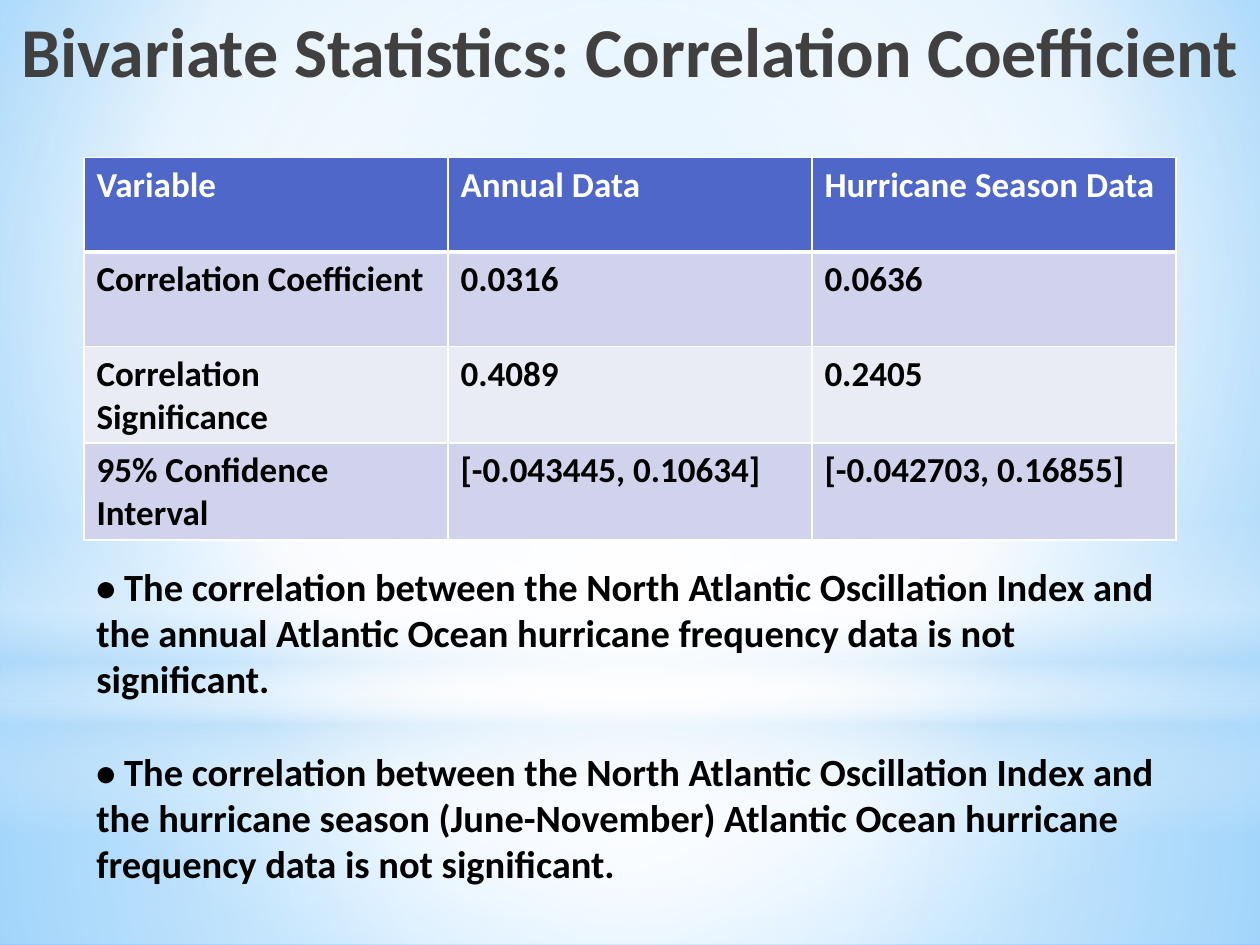
from typing import NamedTuple

from lxml.etree import SubElement
from pptx import Presentation
from pptx.dml.color import RGBColor
from pptx.enum.shapes import MSO_SHAPE as Shape
from pptx.enum.text import PP_ALIGN as Align
from pptx.oxml.ns import qn
from pptx.util import Pt

COLORS = {
    "white": "FFFFFF",
    "black": "000000",
    "title": "404040",
    "header": "4E67C8",
    "band_dark": "D0D3EB",
    "band_light": "E9EBF5",
    "haze": "B4DCFA",
    "sky": "9ED5FF",
    "deep_sky": "5BB9FF",
}
FONT = "Calibri"
WIDTH, HEIGHT = 720, 540
MARGIN, CONTENT_WIDTH = 48, 624
CENTER = (50, 50, 50, 50)


class Stop(NamedTuple):
    position: int
    color: str
    opacity: int = 100


class Glow(NamedTuple):
    shape: Shape
    top: float
    height: float
    stops: list[Stop]
    focus: tuple | None = CENTER  # None gives a vertical linear gradient


GLOWS = [
    Glow(Shape.RECTANGLE, 402, 138,
         [Stop(0, "white", 91), Stop(37, "white", 76), Stop(100, "haze", 79)]),
    Glow(Shape.RECTANGLE, 0, 402,
         [Stop(0, "white", 89), Stop(48, "white", 62), Stop(100, "haze", 79)]),
    Glow(Shape.RECTANGLE, 297, 180,
         [Stop(0, "white", 0), Stop(29, "white", 30), Stop(45, "haze", 40),
          Stop(55, "white", 26), Stop(65, "haze", 60), Stop(100, "white", 0)], None),
    Glow(Shape.OVAL, 126, 402, [Stop(0, "white"), Stop(56, "white", 0)]),
]
ROWS = [
    ("Variable", "Annual Data", "Hurricane Season Data"),
    ("Correlation Coefficient", "0.0316", "0.0636"),
    ("Correlation Significance", "0.4089", "0.2405"),
    ("95% Confidence Interval", "[-0.043445, 0.10634]", "[-0.042703, 0.16855]"),
]
FINDINGS = [
    "• The correlation between the North Atlantic Oscillation Index and "
    "the annual Atlantic Ocean hurricane frequency data is not significant.",
    "• The correlation between the North Atlantic Oscillation Index and the hurricane "
    "season (June-November) Atlantic Ocean hurricane frequency data is not significant.",
]


def rgb(name: str) -> RGBColor:
    return RGBColor.from_string(COLORS[name])


def add_color(parent, name: str, opacity: int = 100) -> None:
    color = SubElement(parent, qn("a:srgbClr"), val=COLORS[name])
    if opacity < 100:
        SubElement(color, qn("a:alpha"), val=str(opacity * 1000))


def set_gradient(fill, holder, stops: list[Stop], focus: tuple | None) -> None:
    """Swap the holder's fill for a gradient, radial around focus or vertical."""
    fill.solid()
    solid = holder.find(qn("a:solidFill"))
    gradient = holder.makeelement(qn("a:gradFill"), {"rotWithShape": "1"})
    stop_list = SubElement(gradient, qn("a:gsLst"))
    for stop in stops:
        entry = SubElement(stop_list, qn("a:gs"), pos=str(stop.position * 1000))
        add_color(entry, stop.color, stop.opacity)
    if focus:
        radial = SubElement(gradient, qn("a:path"), path="circle")
        sides = {side: str(value * 1000) for side, value in zip("ltrb", focus)}
        SubElement(radial, qn("a:fillToRect"), sides)
    else:
        SubElement(gradient, qn("a:lin"), ang="5400000", scaled="0")
    holder.replace(solid, gradient)


def add_glow(page, glow: Glow) -> None:
    shape = page.shapes.add_shape(glow.shape, 0, Pt(glow.top), Pt(WIDTH), Pt(glow.height))
    shape.shadow.inherit = False
    shape.line.fill.background()
    set_gradient(shape.fill, shape.element.spPr, glow.stops, glow.focus)


def write_text(frame, *texts: str, size: float, color: str = "black",
               align: Align = Align.LEFT, gap: float = 0) -> None:
    """Write one bold paragraph per text, with a gap between paragraphs."""
    frame.word_wrap = True
    for index, text in enumerate(texts):
        para = frame.add_paragraph() if index else frame.paragraphs[0]
        para.alignment = align
        para.space_before = Pt(gap if index else 0)
        span = para.add_run()
        span.text = text
        span.font.name, span.font.size, span.font.bold = FONT, Pt(size), True
        span.font.color.rgb = rgb(color)


def add_text(page, left: float, top: float, width: float, height: float,
             *texts: str, **style) -> None:
    box = page.shapes.add_textbox(Pt(left), Pt(top), Pt(width), Pt(height))
    write_text(box.text_frame, *texts, **style)


def set_borders(cell, top: float, bottom: float) -> None:
    properties = cell._tc.get_or_add_tcPr()
    for side, width in (("L", 1), ("R", 1), ("T", top), ("B", bottom)):
        line = SubElement(properties, qn(f"a:ln{side}"), w=str(Pt(width)))
        add_color(SubElement(line, qn("a:solidFill")), "white")


def add_data_table(page, rows: list[tuple], top: float, row_height: float) -> None:
    table = page.shapes.add_table(len(rows), len(rows[0]), Pt(MARGIN), Pt(top),
                                  Pt(CONTENT_WIDTH), Pt(row_height * len(rows))).table
    for row, texts in enumerate(rows):
        band = "header" if row == 0 else "band_dark" if row % 2 else "band_light"
        for column, text in enumerate(texts):
            cell = table.cell(row, column)
            set_borders(cell, top=3 if row == 1 else 1, bottom=1 if row else 3)
            cell.fill.solid()
            cell.fill.fore_color.rgb = rgb(band)
            write_text(cell.text_frame, text, size=20, color="black" if row else "white")


def main() -> None:
    deck = Presentation()
    deck.slide_width, deck.slide_height = Pt(WIDTH), Pt(HEIGHT)
    page = deck.slides.add_slide(deck.slide_layouts[6])

    # Sky background with layers of light
    sky = page.background.fill
    sky.solid()
    set_gradient(sky, page.element.find(".//" + qn("p:bgPr")),
                 [Stop(0, "sky"), Stop(60, "white"), Stop(100, "deep_sky")],
                 (20, 10, 20, 60))
    for glow in GLOWS:
        add_glow(page, glow)

    # Title, table and findings
    add_text(page, 0, 1, WIDTH, 90, "Bivariate Statistics: Correlation Coefficient",
             size=40, color="title", align=Align.CENTER)
    add_data_table(page, ROWS, top=90, row_height=54)
    add_text(page, MARGIN, 318, CONTENT_WIDTH, 216, *FINDINGS, size=22, gap=26.8)

    deck.save("out.pptx")


if __name__ == "__main__":
    main()
